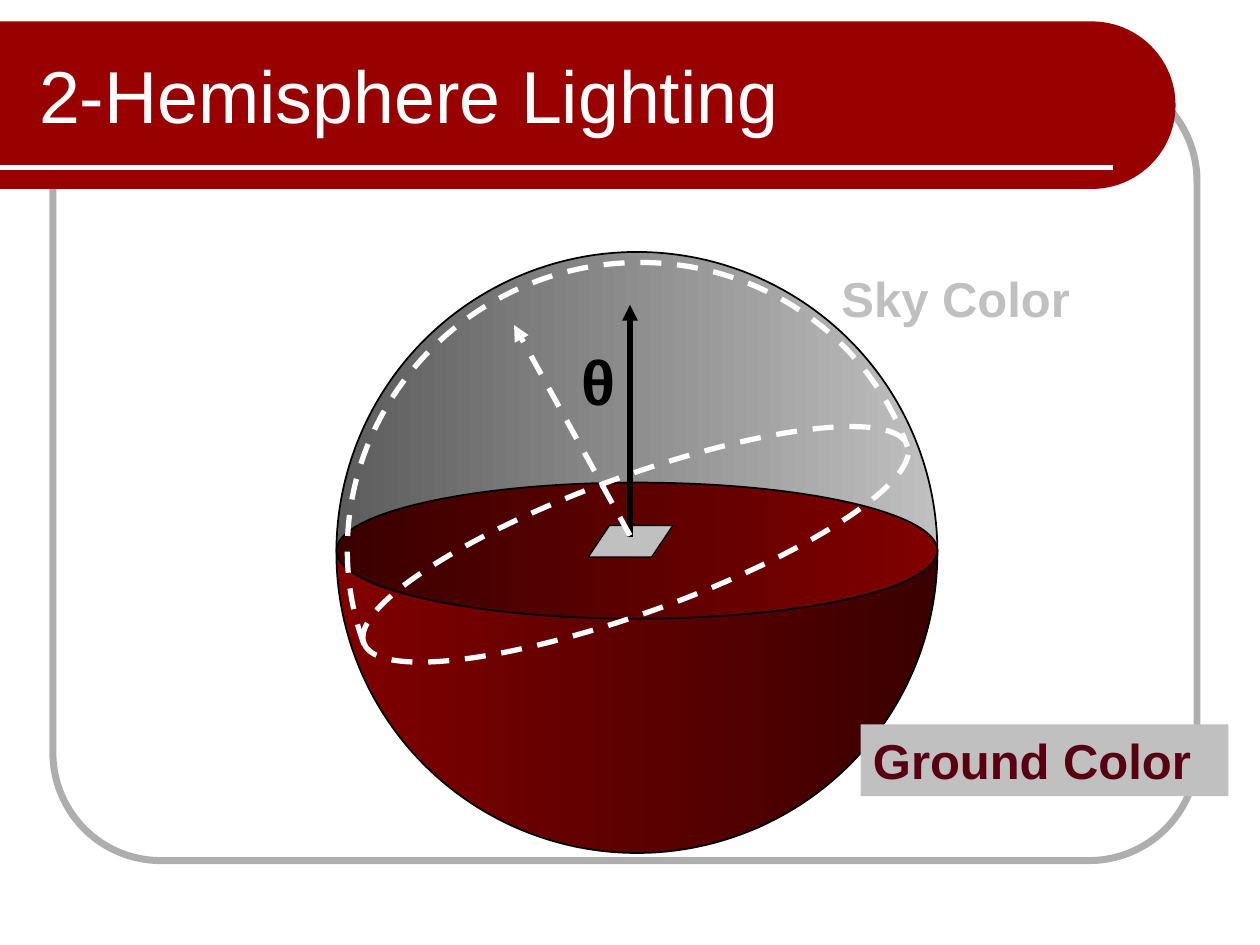
"""Builds the 2-Hemisphere Lighting slide."""
from dataclasses import dataclass
from typing import Optional

from lxml.etree import SubElement
from pptx import Presentation
from pptx.dml.color import RGBColor
from pptx.enum.dml import MSO_LINE
from pptx.enum.shapes import MSO_CONNECTOR, MSO_SHAPE as Sh
from pptx.enum.text import MSO_ANCHOR, PP_ALIGN
from pptx.oxml.ns import qn
from pptx.util import Inches, Pt

RED, GRAY, WHITE, BLACK = "990000", "C0C0C0", "FFFFFF", "000000"
DARK_SKY, GROUND, DARK_GROUND = "5C5C5C", "800000", "3A0000"


@dataclass
class Shape:
    kind: Sh
    box: tuple[float, float, float, float]
    fill: tuple[str, ...] = ()
    line: Optional[str] = None
    width: float = 1
    dash: bool = False
    rot: float = 0
    adj: tuple[float, ...] = ()


@dataclass
class Line:
    start: tuple[float, float]
    end: tuple[float, float]
    color: str
    arrow: bool = True
    dash: bool = False


@dataclass
class Label:
    text: str
    box: tuple[float, float, float, float]
    size: float
    color: str
    fill: Optional[str] = None
    align: PP_ALIGN = PP_ALIGN.LEFT


def rgb(color: str) -> RGBColor:
    return RGBColor.from_string(color)


def arc(start: float, end: float) -> tuple[float, float]:
    """Turns degrees into arc adjustment values."""
    return start * 0.6, end * 0.6


def set_line(line, color: str, width: float, dash: bool) -> None:
    line.color.rgb = rgb(color)
    line.width = Pt(width)
    if dash:
        line.dash_style = MSO_LINE.DASH


def draw_shape(s, item: Shape) -> None:
    sp = s.shapes.add_shape(item.kind, *map(Inches, item.box))
    sp.shadow.inherit = False
    sp.rotation = item.rot
    for i, value in enumerate(item.adj):
        sp.adjustments[i] = value
    if len(item.fill) == 2:
        sp.fill.gradient()
        sp.fill.gradient_angle = 0
        for stop, color in zip(sp.fill.gradient_stops, item.fill):
            stop.color.rgb = rgb(color)
    elif item.fill:
        sp.fill.solid()
        sp.fill.fore_color.rgb = rgb(item.fill[0])
    else:
        sp.fill.background()
    if item.line:
        set_line(sp.line, item.line, item.width, item.dash)
    else:
        sp.line.fill.background()


def draw_line(s, item: Line) -> None:
    points = map(Inches, item.start + item.end)
    cx = s.shapes.add_connector(MSO_CONNECTOR.STRAIGHT, *points)
    set_line(cx.line, item.color, 3, item.dash)
    spPr = cx.element.spPr
    if item.arrow:
        SubElement(spPr.find(qn("a:ln")), qn("a:tailEnd"), type="triangle")
    SubElement(spPr, qn("a:effectLst"))


def write(tf, text: str, *, size: float, color: str, bold: bool = False,
          align: PP_ALIGN = PP_ALIGN.LEFT) -> None:
    tf.word_wrap = True
    p = tf.paragraphs[0]
    p.alignment = align
    r = p.add_run()
    r.text = text
    r.font.name, r.font.size, r.font.bold = "Arial", Pt(size), bold
    r.font.color.rgb = rgb(color)


def draw_label(s, item: Label) -> None:
    sp = s.shapes.add_textbox(*map(Inches, item.box))
    if item.fill:
        sp.fill.solid()
        sp.fill.fore_color.rgb = rgb(item.fill)
    write(sp.text_frame, item.text, size=item.size, color=item.color,
          bold=True, align=item.align)


def draw_title(s, text: str) -> None:
    """Fills the title and brings it in front of the banner."""
    sp = s.shapes.title
    sp.left, sp.top, sp.width, sp.height = map(Inches, (0.21, 0.25, 7.79, 1))
    sp.text_frame.vertical_anchor = MSO_ANCHOR.MIDDLE
    write(sp.text_frame, text, size=42, color=WHITE)
    sp.element.getparent().append(sp.element)


SPHERE = (2.67, 2, 4.77, 4.77)
FRAME = Shape(Sh.ROUNDED_RECTANGLE, (0.42, 0.58, 9.08, 6.25), line="AEAEAE",
              width=4, adj=(0.137,))
BANNER = Shape(Sh.ROUND_2_SAME_RECTANGLE, (4, -3.83, 1.33, 9.33), (RED,),
               rot=90, adj=(0.5, 0))
BANNER_RULE = Line((0, 1.33), (8.83, 1.33), WHITE, arrow=False)
HEMISPHERES = [
    Shape(Sh.ARC, SPHERE, (DARK_SKY, GRAY), BLACK, adj=arc(180, 0)),
    Shape(Sh.ARC, SPHERE, (GROUND, DARK_GROUND), BLACK, adj=arc(0, 180)),
    Shape(Sh.OVAL, (2.67, 3.83, 4.77, 1.08), (DARK_GROUND, GROUND), BLACK),
    Shape(Sh.OVAL, (2.75, 3.78, 4.59, 1.08), line=WHITE, width=3, dash=True,
          rot=340),
    Shape(Sh.ARC, (2.75, 2.09, 4.59, 4.48), line=WHITE, width=3, dash=True,
          rot=340, adj=arc(180, 0)),
]
SURFACE = Shape(Sh.PARALLELOGRAM, (4.67, 4.17, 0.67, 0.25), (GRAY,), BLACK,
                0.75, adj=(0.67,))
VECTORS = [
    Line((5, 4.26), (5, 2.42), BLACK),
    Line((5, 4.25), (4.08, 2.58), WHITE, dash=True),
]
COLOR_LABELS = [
    Label("Sky Color", (6.58, 2.08, 2.92, 0.57), 28, GRAY),
    Label("Ground Color", (6.83, 5.75, 2.92, 0.57), 28, "580011", GRAY),
]
ANGLE = Label("θ", (4.5, 2.67, 0.5, 0.7), 36, BLACK, align=PP_ALIGN.CENTER)


def main() -> None:
    prs = Presentation()
    prs.slide_width, prs.slide_height = Inches(10), Inches(7.5)
    s = prs.slides.add_slide(prs.slide_layouts[5])
    draw_shape(s, FRAME)
    draw_shape(s, BANNER)
    draw_line(s, BANNER_RULE)
    draw_title(s, "2-Hemisphere Lighting")
    for item in HEMISPHERES:
        draw_shape(s, item)
    for label in COLOR_LABELS:
        draw_label(s, label)
    draw_shape(s, SURFACE)
    for vector in VECTORS:
        draw_line(s, vector)
    draw_label(s, ANGLE)
    prs.save("out.pptx")


if __name__ == "__main__":
    main()
